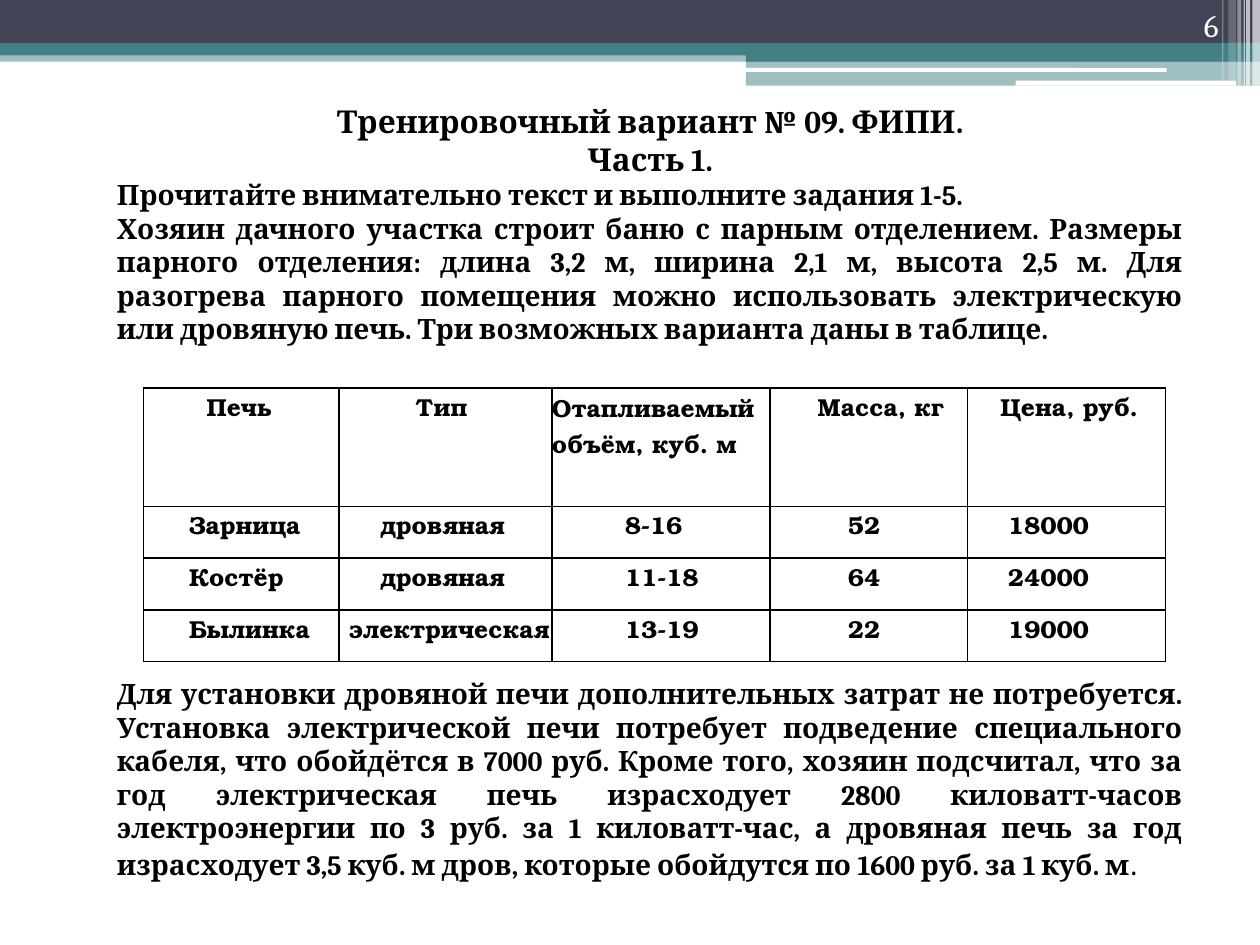
"""Builds a slide with a sauna stove exercise: banner, task text and stove table."""
from typing import NamedTuple, Optional

import pptx
import pptx.dml.color
import pptx.enum.shapes
import pptx.enum.text
import pptx.oxml
import pptx.oxml.ns
import pptx.util
from lxml import etree

Inches = pptx.util.Inches
Pt = pptx.util.Pt
RGBColor = pptx.dml.color.RGBColor
ALIGN = pptx.enum.text.PP_ALIGN
ANCHOR = pptx.enum.text.MSO_ANCHOR
SHAPE = pptx.enum.shapes.MSO_SHAPE
qn = pptx.oxml.ns.qn

BLACK = RGBColor(0x00, 0x00, 0x00)
WHITE = RGBColor(0xFF, 0xFF, 0xFF)
TEAL = RGBColor(0x43, 0x80, 0x86)
SLATE = RGBColor(0x42, 0x44, 0x56)
BODY_FONT = "Cambria"
TABLE_FONT = "TeX Gyre Bonum"


class Bar(NamedTuple):
    left: float
    top: float
    width: float
    height: float
    color: RGBColor
    alpha: int = 100
    rounded: bool = False


class Run(NamedTuple):
    text: str
    size: int
    bold: bool = True
    color: RGBColor = BLACK
    font: str = BODY_FONT


class Para(NamedTuple):
    runs: list[Run]
    align: Optional[ALIGN] = ALIGN.JUSTIFY


class Cell(NamedTuple):
    text: str
    indent: float


BARS = [
    Bar(0, 0.4, 10, 0.09, TEAL, 50),
    Bar(0, 0, 10, 0.34, SLATE),
    Bar(0, 0.34, 10, 0.1, TEAL),
    Bar(5.92, 0.39, 4.08, 0.1, TEAL),
    Bar(5.92, 0.48, 4.08, 0.2, TEAL, 50),
    Bar(5.91, 0.54, 3.35, 0.03, WHITE, rounded=True),
    Bar(8.06, 0.64, 1.75, 0.04, WHITE, rounded=True),
    Bar(9.94, 0, 0.06, 0.68, WHITE, 65),
    Bar(9.89, 0, 0.03, 0.68, WHITE, 65),
    Bar(9.87, 0, 0.01, 0.68, WHITE, 60),
    Bar(9.82, 0, 0.03, 0.68, WHITE, 40),
    Bar(9.75, 0, 0.06, 0.64, WHITE, 20),
    Bar(9.7, 0, 0.01, 0.64, WHITE, 30),
]
INTRO = [
    Para([Run("Тренировочный вариант № 09. ФИПИ.", 18)], ALIGN.CENTER),
    Para([Run("Часть 1.", 18)], ALIGN.CENTER),
    Para([Run("Прочитайте внимательно текст и выполните задания 1-5.", 16)]),
    Para([Run(
        "Хозяин дачного участка строит баню с парным отделением. Размеры парного "
        "отделения: длина 3,2 м, ширина 2,1 м, высота 2,5 м. Для разогрева парного "
        "помещения можно использовать электрическую или дровяную печь. Три возможных "
        "варианта даны в таблице.", 16)]),
]
COSTS = [
    Para([
        Run("Для установки дровяной печи дополнительных затрат не потребуется. Установка "
            "электрической печи потребует подведение специального кабеля, что обойдётся "
            "в 7000 руб. Кроме того, хозяин подсчитал, что за год электрическая печь "
            "израсходует 2800 киловатт-часов электроэнергии по 3 руб. за 1 киловатт-час, "
            "а дровяная печь за год израсходует 3,5 куб. м дров, которые обойдутся "
            "по 1600 руб. за 1 куб. м", 16),
        Run(".", 18, False),
    ]),
]
COL_WIDTHS = [1.55, 1.69, 1.73, 1.57, 1.57]
ROW_HEIGHTS = [0.94, 0.41, 0.41, 0.41]
ROWS = [
    [Cell("Печь", 0.5), Cell("Тип", 0.61), Cell("Отапливаемый объём, куб. м", 0),
     Cell("Масса, кг", 0.38), Cell("Цена, руб.", 0.26)],
] + [
    [Cell(name, 0.36), Cell(kind, indent), Cell(volume, 0.58), Cell(mass, 0.62), Cell(price, 0.32)]
    for name, kind, indent, volume, mass, price in [
        ("Зарница", "дровяная", 0.33, "8-16", "52", "18000"),
        ("Костёр", "дровяная", 0.33, "11-18", "64", "24000"),
        ("Былинка", "электрическая", 0.08, "13-19", "22", "19000"),
    ]
]


def add_bar(s: pptx.slide.Slide, bar: Bar) -> None:
    kind = SHAPE.ROUNDED_RECTANGLE if bar.rounded else SHAPE.RECTANGLE
    sp = s.shapes.add_shape(kind, *map(Inches, bar[:4]))
    sp.shadow.inherit = False
    sp.line.fill.background()
    sp.fill.solid()
    sp.fill.fore_color.rgb = bar.color
    if bar.alpha < 100:
        color = sp.fill._xPr.find(qn("a:solidFill"))[0]
        etree.SubElement(color, qn("a:alpha"), val=str(bar.alpha * 1000))


def add_run(p: pptx.text.text._Paragraph, run: Run) -> None:
    r = p.add_run()
    r.text = run.text
    r.font.size = Pt(run.size)
    r.font.name = run.font
    r.font.bold = run.bold
    r.font.color.rgb = run.color


def add_text(s: pptx.slide.Slide, left: float, top: float, width: float, height: float,
             paras: list[Para], anchor: ANCHOR = ANCHOR.TOP) -> None:
    sp = s.shapes.add_textbox(Inches(left), Inches(top), Inches(width), Inches(height))
    tf = sp.text_frame
    tf.word_wrap = True
    tf.vertical_anchor = anchor
    for i, para in enumerate(paras):
        p = tf.add_paragraph() if i else tf.paragraphs[0]
        p.alignment = para.align
        for run in para.runs:
            add_run(p, run)


def fill_cell(cell: pptx.table._Cell, data: Cell) -> None:
    cell.margin_left = cell.margin_right = cell.margin_top = cell.margin_bottom = 0
    p = cell.text_frame.paragraphs[0]
    if data.indent:
        p._p.get_or_add_pPr().set("marL", str(Inches(data.indent)))
    else:
        p.alignment = ALIGN.JUSTIFY
        p.line_spacing = Pt(20.9)
    add_run(p, Run(data.text, 14, font=TABLE_FONT))
    tcPr = cell._tc.get_or_add_tcPr()
    for side in ("a:lnL", "a:lnR", "a:lnT", "a:lnB"):
        ln = etree.SubElement(tcPr, qn(side), w=str(Pt(1)))
        fill = etree.SubElement(ln, qn("a:solidFill"))
        etree.SubElement(fill, qn("a:srgbClr"), val=str(BLACK))
    cell.fill.solid()
    cell.fill.fore_color.rgb = WHITE


def add_stove_table(s: pptx.slide.Slide) -> None:
    table = s.shapes.add_table(len(ROWS), len(COL_WIDTHS), Inches(1.14), Inches(3.08),
                               Inches(sum(COL_WIDTHS)), Inches(sum(ROW_HEIGHTS))).table
    for column, width in zip(table.columns, COL_WIDTHS):
        column.width = Inches(width)
    for row, height, cells in zip(table.rows, ROW_HEIGHTS, ROWS):
        row.height = Inches(height)
        for cell, data in zip(row.cells, cells):
            fill_cell(cell, data)


def main() -> None:
    prs = pptx.Presentation()
    prs.slide_width, prs.slide_height = Inches(10), Inches(7.5)
    s = prs.slides.add_slide(prs.slide_layouts[6])
    for bar in BARS:
        add_bar(s, bar)
    number = Para([Run("6", 18, False, WHITE)], ALIGN.RIGHT)
    add_text(s, 8.94, 0, 0.83, 0.4, [number], ANCHOR.BOTTOM)
    add_text(s, 0.83, 0.76, 8.66, 2.05, INTRO)
    add_stove_table(s)
    add_text(s, 0.83, 5.32, 8.66, 2.02, COSTS)
    prs.save("out.pptx")


if __name__ == "__main__":
    main()
